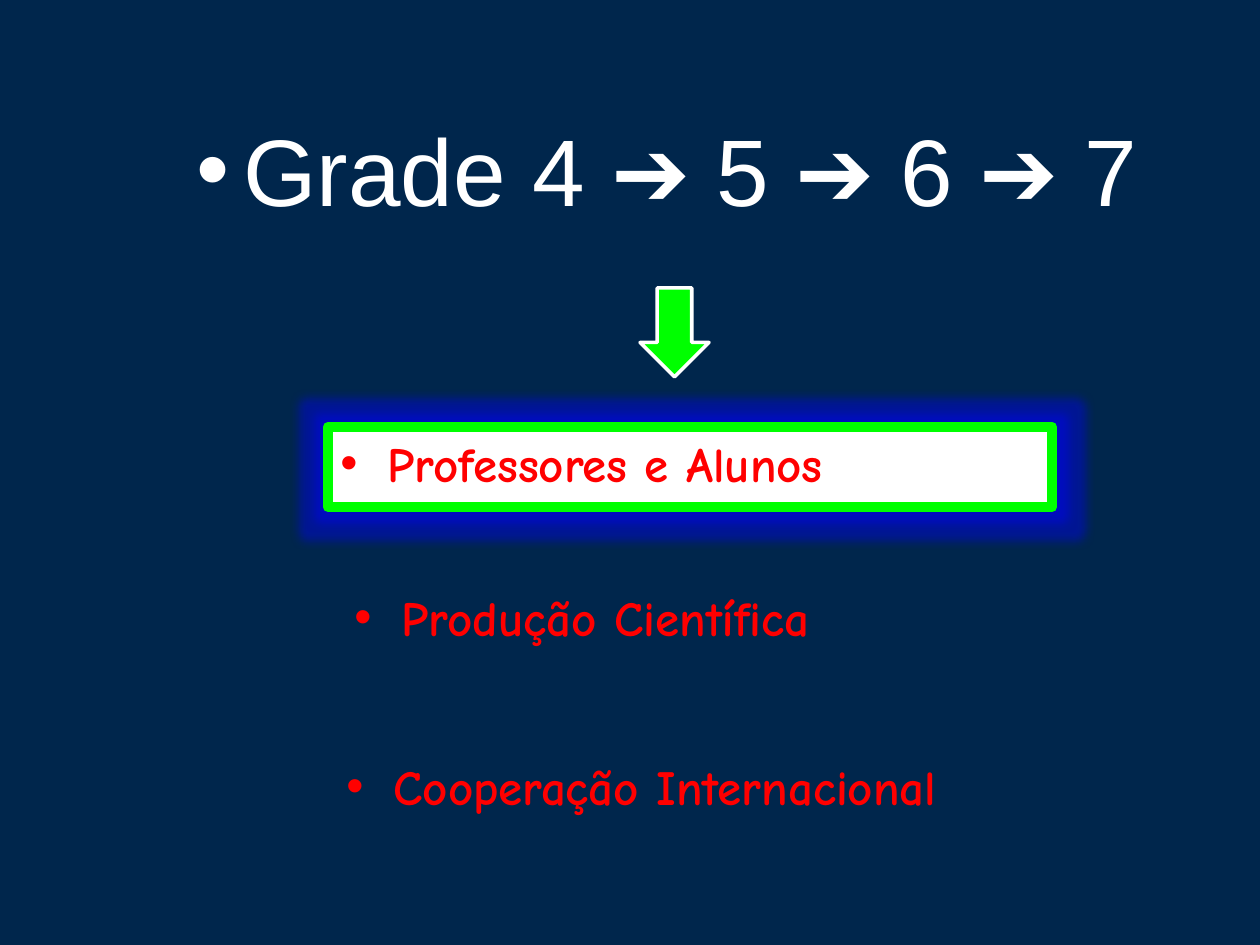
from dataclasses import dataclass

from lxml.etree import SubElement
from pptx import Presentation
from pptx.dml.color import RGBColor
from pptx.enum.shapes import MSO_SHAPE
from pptx.enum.text import MSO_ANCHOR, PP_ALIGN
from pptx.oxml.ns import qn
from pptx.util import Pt

EMU_PER_PX = 914400 / 126
NAVY = RGBColor(0x00, 0x26, 0x4C)
WHITE = RGBColor(0xFF, 0xFF, 0xFF)
GREEN = RGBColor(0x00, 0xFF, 0x00)
RED = RGBColor(0xFF, 0x00, 0x00)
BLUE = RGBColor(0x00, 0x00, 0xFF)
BULLET_INDENT = 47


@dataclass(frozen=True)
class Bullet:
    text: str
    left: int
    top: int
    width: int
    height: int
    size: int = 28
    font: str = "Comic Neue"
    color: RGBColor = RED
    bold: bool = True
    fill: RGBColor = WHITE
    line_weight: int = 6
    clear: bool = True


HEADING = Bullet("Grade 4 ➔ 5 ➔ 6 ➔ 7", 184, 106, 1042, 118, 54, "Arial",
                 WHITE, False, NAVY, 0, False)
OTHER_CRITERIA = [
    Bullet("Produção Científica", 342, 581, 784, 92),
    Bullet("Cooperação Internacional", 334, 750, 722, 91),
]
CURRENT_CRITERION = Bullet("Professores e Alunos", 328, 427, 724, 80, clear=False)


def px(length: int) -> int:
    return round(length * EMU_PER_PX)


def add_block(page, kind: MSO_SHAPE, left: int, top: int, width: int, height: int,
              fill: RGBColor, line: RGBColor, weight: int):
    shape = page.shapes.add_shape(kind, px(left), px(top), px(width), px(height))
    shape.shadow.inherit = False
    shape.fill.solid()
    shape.fill.fore_color.rgb = fill
    if weight:
        shape.line.color.rgb = line
        shape.line.width = Pt(weight)
    else:
        shape.line.fill.background()
    return shape


def make_clear(shape) -> None:
    for tint in shape._element.spPr.iter(qn("a:srgbClr")):
        SubElement(tint, qn("a:alpha"), val="0")


def add_glow(shape, color: RGBColor, radius: int, opacity: int) -> None:
    effects = shape._element.spPr.find(qn("a:effectLst"))
    glow = SubElement(effects, qn("a:glow"), rad=str(Pt(radius)))
    tint = SubElement(glow, qn("a:srgbClr"), val=str(color))
    SubElement(tint, qn("a:alpha"), val=str(opacity * 1000))


def add_bullet(page, item: Bullet):
    box = add_block(page, MSO_SHAPE.RECTANGLE, item.left, item.top, item.width,
                    item.height, item.fill, GREEN, item.line_weight)
    if item.clear:
        make_clear(box)
    frame = box.text_frame
    frame.word_wrap = True
    frame.vertical_anchor = MSO_ANCHOR.TOP
    para = frame.paragraphs[0]
    para.alignment = PP_ALIGN.LEFT
    properties = para._p.get_or_add_pPr()
    properties.set("marL", str(px(BULLET_INDENT)))
    properties.set("indent", str(-px(BULLET_INDENT)))
    SubElement(properties, qn("a:buFont"), typeface="Arial")
    SubElement(properties, qn("a:buChar"), char="•")
    span = para.add_run()
    span.text = item.text
    span.font.name = item.font
    span.font.size = Pt(item.size)
    span.font.bold = item.bold
    span.font.color.rgb = item.color
    return box


def main() -> None:
    deck = Presentation()
    deck.slide_width, deck.slide_height = px(1260), px(945)
    page = deck.slides.add_slide(deck.slide_layouts[6])
    page.background.fill.solid()
    page.background.fill.fore_color.rgb = NAVY

    # Grade heading and the criteria still to come
    for item in [HEADING, *OTHER_CRITERIA]:
        add_bullet(page, item)

    # Arrow from the grades to the glowing current criterion
    add_block(page, MSO_SHAPE.DOWN_ARROW, 640, 288, 69, 89, GREEN, WHITE, 2)
    add_glow(add_bullet(page, CURRENT_CRITERION), BLUE, 11, 40)

    deck.save("out.pptx")


if __name__ == "__main__":
    main()
